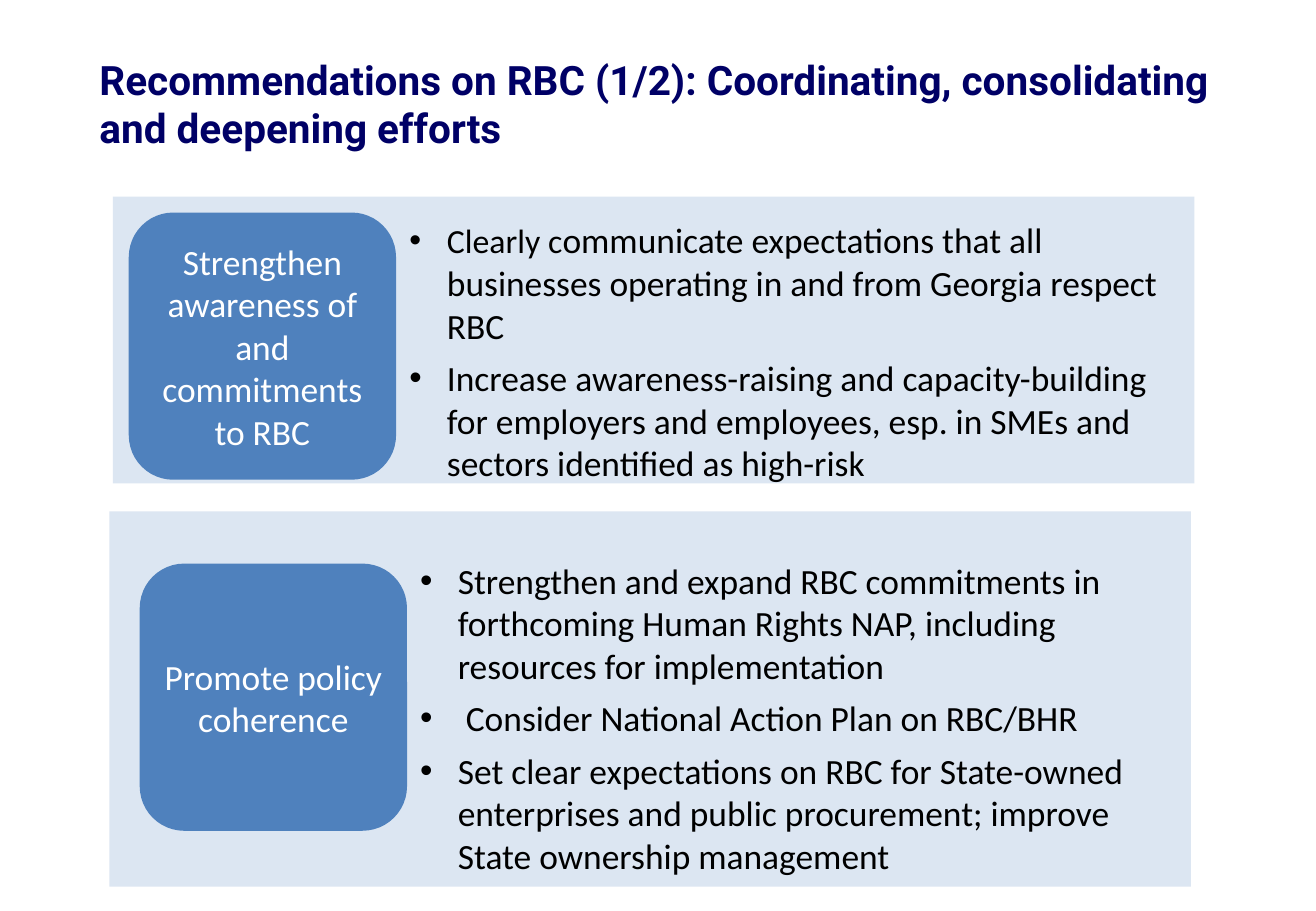
from dataclasses import dataclass

from lxml.etree import SubElement
from pptx import Presentation
from pptx.dml.color import RGBColor
from pptx.enum.shapes import MSO_SHAPE
from pptx.enum.text import MSO_ANCHOR, PP_ALIGN
from pptx.oxml.ns import qn
from pptx.util import Inches, Pt


@dataclass(frozen=True)
class Theme:
    navy: RGBColor = RGBColor(0x00, 0x00, 0x66)
    pale_blue: RGBColor = RGBColor(0xDC, 0xE6, 0xF2)
    mid_blue: RGBColor = RGBColor(0x4F, 0x81, 0xBD)
    white: RGBColor = RGBColor(0xFF, 0xFF, 0xFF)
    black: RGBColor = RGBColor(0x00, 0x00, 0x00)
    title_font: str = "Roboto"
    body_font: str = "Calibri"
    title_size: int = 24
    body_size: int = 21
    lead_size: int = 20


class RecommendationSlide:
    def __init__(self, presentation, theme):
        self.theme = theme
        self.slide = presentation.slides.add_slide(presentation.slide_layouts[6])

    def style(self, paragraph, color, font=None, size=None, bold=False):
        paragraph.font.name = font or self.theme.body_font
        paragraph.font.size = Pt(size or self.theme.body_size)
        paragraph.font.color.rgb = color
        paragraph.font.bold = bold

    def block(self, preset, box, color):
        block = self.slide.shapes.add_shape(preset, *map(Inches, box))
        block.shadow.inherit = False
        block.fill.solid()
        block.fill.fore_color.rgb = color
        block.line.fill.background()
        return block

    def text_frame(self, box):
        frame = self.slide.shapes.add_textbox(*map(Inches, box)).text_frame
        frame.word_wrap = True
        return frame

    def title(self, text, box):
        frame = self.text_frame(box)
        frame.vertical_anchor = MSO_ANCHOR.MIDDLE
        frame.text = text
        self.style(frame.paragraphs[0], self.theme.navy, self.theme.title_font,
                   self.theme.title_size, bold=True)

    def panel(self, box):
        self.block(MSO_SHAPE.RECTANGLE, box, self.theme.pale_blue)

    def goal(self, text, left, top, side=2.2):
        frame = self.block(MSO_SHAPE.ROUNDED_RECTANGLE, (left, top, side, side),
                           self.theme.mid_blue).text_frame
        frame.word_wrap = True
        frame.vertical_anchor = MSO_ANCHOR.MIDDLE
        frame.margin_left = frame.margin_right = Inches(0.06)
        frame.text = text
        frame.paragraphs[0].alignment = PP_ALIGN.CENTER
        self.style(frame.paragraphs[0], self.theme.white)

    def actions(self, items, box):
        """Add a bulleted list; each item is a list of (text, size) runs."""
        frame = self.text_frame(box)
        for index, runs in enumerate(items):
            paragraph = frame.add_paragraph() if index else frame.paragraphs[0]
            for text, size in runs:
                run = paragraph.add_run()
                run.text = text
                if size != self.theme.body_size:
                    run.font.size = Pt(size)
            paragraph.space_after = Pt(6)
            self.bullet(paragraph)
            self.style(paragraph, self.theme.black)

    def bullet(self, paragraph, indent=Inches(0.31)):
        properties = paragraph._p.get_or_add_pPr()
        properties.set("marL", str(indent))
        properties.set("indent", str(-indent))
        SubElement(properties, qn("a:buFont")).set("typeface", "Arial")
        SubElement(properties, qn("a:buChar")).set("char", "•")


def main():
    presentation = Presentation()
    presentation.slide_width = Inches(10.83)
    presentation.slide_height = Inches(7.5)
    theme = Theme()
    slide = RecommendationSlide(presentation, theme)
    size = theme.body_size

    slide.title("Recommendations on RBC (1/2): Coordinating, consolidating "
                "and deepening efforts", (0.72, 0.3, 9.57, 1.1))

    slide.panel((0.93, 1.62, 8.9, 2.36))
    slide.goal("Strengthen awareness of and commitments to RBC", 1.06, 1.75)
    slide.actions([
        [("Clearly c", theme.lead_size),
         ("ommunicate expectations that all businesses operating in and "
          "from Georgia respect RBC", size)],
        [("Increase awareness-raising and capacity-building for employers and "
          "employees, esp. in SMEs and sectors identified as high-risk", size)],
    ], (3.27, 1.75, 6.44, 2.31))

    slide.panel((0.9, 4.21, 8.9, 3.09))
    slide.goal("Promote policy coherence", 1.15, 4.64)
    slide.actions([
        [("Strengthen and expand RBC commitments in forthcoming Human Rights "
          "NAP, including resources for implementation", size)],
        [(" Consider National Action Plan on RBC/BHR", size)],
        [("Set clear expectations on RBC for State-owned enterprises and public "
          "procurement; improve State ownership management", size)],
    ], (3.36, 4.55, 6.44, 2.74))

    presentation.save("out.pptx")


if __name__ == "__main__":
    main()
